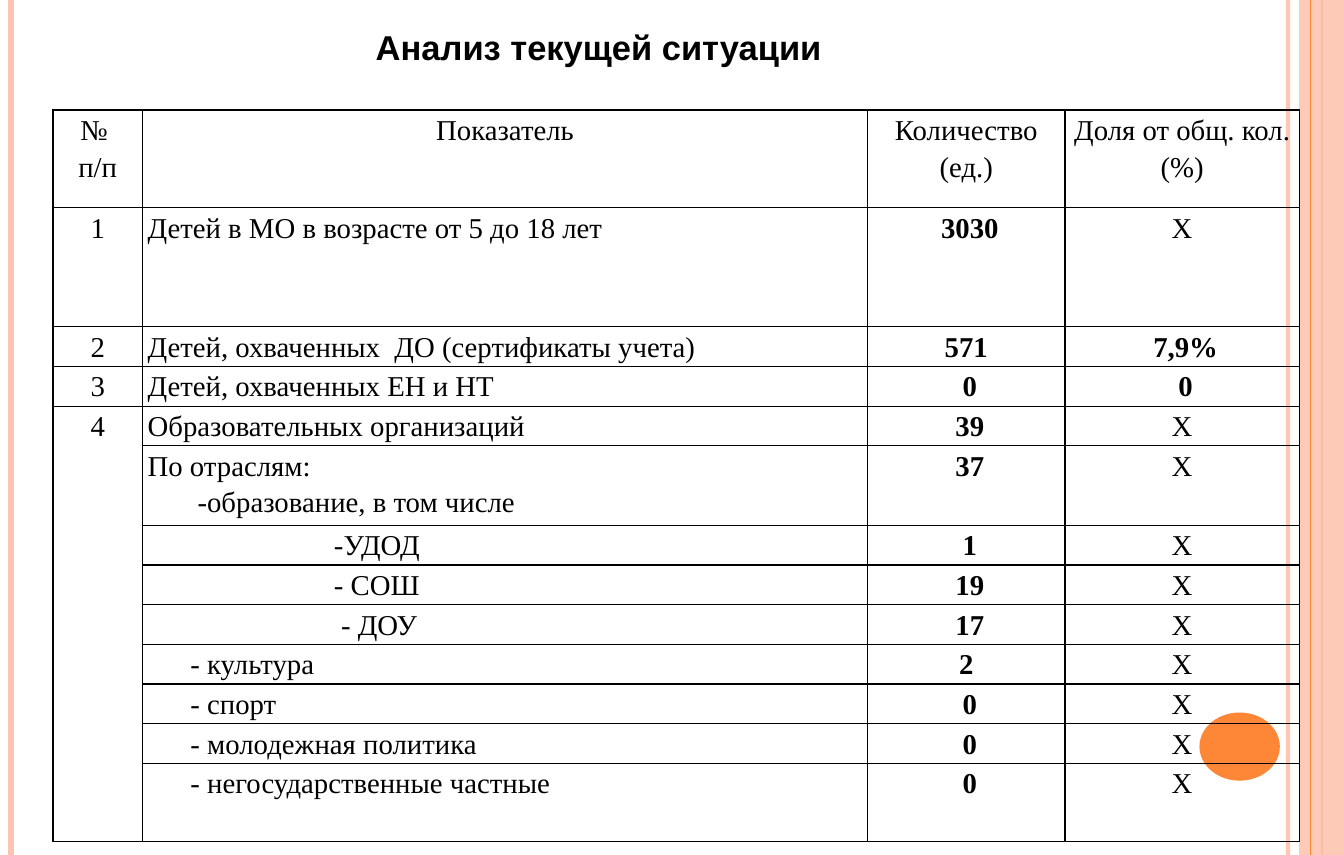
from pptx import Presentation
from pptx.dml.color import RGBColor
from pptx.enum.shapes import MSO_CONNECTOR, MSO_SHAPE
from pptx.enum.text import MSO_ANCHOR, MSO_AUTO_SIZE, PP_ALIGN
from pptx.oxml.ns import qn
from pptx.util import Emu, Pt
from lxml import etree

LEFT, CENTER = PP_ALIGN.LEFT, PP_ALIGN.CENTER
TOP, NO_FIT = MSO_ANCHOR.TOP, MSO_AUTO_SIZE.NONE
RECT, OVAL = MSO_SHAPE.RECTANGLE, MSO_SHAPE.OVAL
STRAIGHT = MSO_CONNECTOR.STRAIGHT

SCALE = 9000  # EMU in one px, 40 px to the centimetre
WIDE, HIGH = 1320, 840
BLACK, PINK, ORANGE = "000000", "FEC3AE", "FE8637"
SIDES = ("a:lnL", "a:lnR", "a:lnT", "a:lnB")

COLS = (88, 712, 194, 230)
HEAD, LINE = 96, 39  # heights of the head row and of a one-line row
HEADS = ("№  п/п", "Показатель", "Количество (ед.)", "Доля от общ. кол.\n(%)")
NUDGE = 7  # small shift of the bold numbers
# Number, lines as (text, indent), count, count indent, share, row height
ROWS = (
    ("1", [("Детей в МО в возрасте от 5 до 18 лет", 0)], "3030", NUDGE, "X", 117),
    ("2", [("Детей, охваченных  ДО (сертификаты учета)", 0)], "571", 0, "7,9%", LINE),
    ("3", [("Детей, охваченных ЕН и НТ", 0)], "0", NUDGE, "0", LINE),
    ("4", [("Образовательных организаций", 0)], "39", NUDGE, "X", LINE),
    ("", [("По отраслям:", 0), ("-образование, в том числе", 49)], "37", NUDGE, "X", 78),
    ("", [("-УДОД", 183)], "1", NUDGE, "X", LINE),
    ("", [("- СОШ", 183)], "19", NUDGE, "X", LINE),
    ("", [("- ДОУ", 190)], "17", NUDGE, "X", LINE),
    ("", [("- культура", 42)], "2", 0, "X", LINE),
    ("", [("- спорт", 42)], "0", NUDGE, "X", LINE),
    ("", [("- молодежная политика", 42)], "0", NUDGE, "X", LINE),
    ("", [("- негосударственные частные", 42)], "0", NUDGE, "X", 77),
)


def px(n):
    return Emu(n * SCALE)


def color(code):
    return RGBColor.from_string(code)


def fade(fill, share):
    tint = fill.find(".//" + qn("a:srgbClr"))
    etree.SubElement(tint, qn("a:alpha"), val=str(share * 1000))


def write(frame, text, font="Times New Roman", size=20, bold=False,
          align=CENTER, space=1.15, indents=()):
    for i, line in enumerate(text.split("\n")):
        para = frame.paragraphs[0] if i == 0 else frame.add_paragraph()
        para.alignment, para.line_spacing = align, space
        para.space_before = para.space_after = Pt(0)
        if indents:
            props = para._p.get_or_add_pPr()
            props.set("marL", str(px(indents[i])))
            props.set("indent", "0")
        run = para.add_run()
        run.text = line
        run.font.name, run.font.size, run.font.bold = font, Pt(size), bold
        run.font.color.rgb = color(BLACK)


class Page:
    def __init__(self, deck):
        self.slide = deck.slides.add_slide(deck.slide_layouts[5])
        self.shapes = self.slide.shapes

    def stripe(self, x, code, width, share=100):
        line = self.shapes.add_connector(STRAIGHT, px(x), 0, px(x), px(HIGH))
        line.line.color.rgb = color(code)
        line.line.width = Pt(width)
        etree.SubElement(line._element.spPr, qn("a:effectLst"))
        if share < 100:
            fade(line._element.spPr, share)

    def shape(self, kind, x, y, w, h, code, share=100):
        item = self.shapes.add_shape(kind, px(x), px(y), px(w), px(h))
        item.shadow.inherit = False
        item.fill.solid()
        item.fill.fore_color.rgb = color(code)
        item.line.fill.background()
        if share < 100:
            fade(item._element.spPr, share)

    def title(self, text, x, y, w, h):
        box = self.shapes.title
        box.left, box.top, box.width, box.height = px(x), px(y), px(w), px(h)
        frame = box.text_frame
        frame.margin_left = frame.margin_right = px(5)
        frame.margin_top = frame.margin_bottom = px(5)
        frame.vertical_anchor, frame.auto_size = TOP, NO_FIT
        frame.word_wrap = True
        write(frame, text, font="Arial", size=24, bold=True, align=LEFT, space=0.9)

    def table(self, x, y, widths, heights):
        grid = self.shapes.add_table(len(heights), len(widths), px(x), px(y),
                                     px(sum(widths)), px(sum(heights))).table
        grid.first_row = grid.horz_banding = False
        for col, w in zip(grid.columns, widths):
            col.width = px(w)
        for row, h in zip(grid.rows, heights):
            row.height = px(h)
        for cell in grid.iter_cells():
            self.frame(cell)
        return grid

    def frame(self, cell):
        cell.margin_left = cell.margin_right = px(5)
        cell.margin_top = cell.margin_bottom = 0
        props = cell._tc.get_or_add_tcPr()
        for side in SIDES:
            edge = etree.SubElement(props, qn(side), w=str(Pt(1)))
            fill = etree.SubElement(edge, qn("a:solidFill"))
            etree.SubElement(fill, qn("a:srgbClr"), val=BLACK)
        cell.fill.background()


def main():
    deck = Presentation()
    deck.slide_width, deck.slide_height = px(WIDE), px(HIGH)
    page = Page(deck)

    # Side stripes and dot
    page.stripe(1265, PINK, 3, share=93)
    page.stripe(11, PINK, 4.5)
    page.stripe(1298, ORANGE, 1.5)
    page.shape(RECT, 1276, 0, 44, HIGH, PINK, share=87)
    page.stripe(1287, ORANGE, 0.75)
    page.shape(OVAL, 1178, 700, 79, 67, ORANGE)

    # Title
    page.title("Анализ текущей ситуации", 364, 25, 522, 47)

    # Table
    grid = page.table(52, 108, COLS, [HEAD] + [row[-1] for row in ROWS])
    for c, head in enumerate(HEADS):
        write(grid.cell(0, c).text_frame, head)
    for r, (num, lines, count, shift, share, _) in enumerate(ROWS, 1):
        cells = [grid.cell(r, c).text_frame for c in range(len(COLS))]
        if num:
            write(cells[0], num)
        write(cells[1], "\n".join(text for text, _ in lines), align=LEFT,
              indents=[indent for _, indent in lines])
        write(cells[2], count, bold=True, indents=[shift])
        digit = share != "X"
        write(cells[3], share, bold=digit, indents=[NUDGE if digit else 0])
    grid.cell(4, 0).merge(grid.cell(len(ROWS), 0))

    deck.save("out.pptx")


if __name__ == "__main__":
    main()
